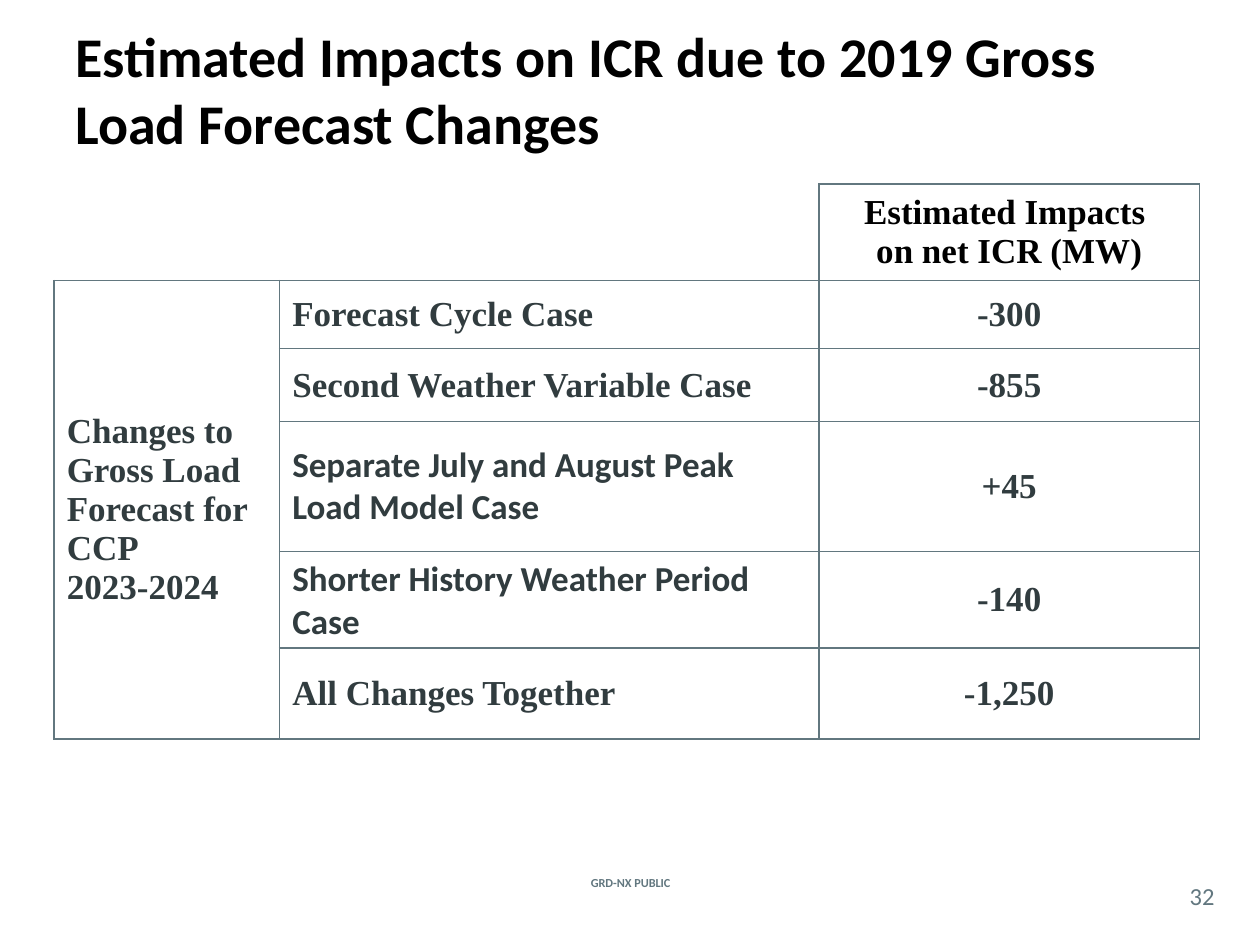
from pptx import Presentation
from pptx.dml.color import RGBColor
from pptx.enum.text import MSO_ANCHOR, PP_ALIGN
from pptx.oxml.ns import qn
from pptx.util import Inches, Pt
from lxml.etree import SubElement

COLORS = {"black": "000000", "slate": "62777F", "dark": "313C3F"}
SERIF, SANS = "Times New Roman", "Calibri"

prs = Presentation()
prs.slide_width, prs.slide_height = Inches(10), Inches(7.5)
s = prs.slides.add_slide(prs.slide_layouts[6])


def write(tf, text, size, font, color, bold=True, align=PP_ALIGN.LEFT):
    tf.word_wrap = True
    tf.text = text
    for p in tf.paragraphs:
        p.alignment = align
        p.font.size, p.font.name, p.font.bold = Pt(size), font, bold
        p.font.color.rgb = RGBColor.from_string(COLORS[color])


def add_border(cell, side, visible):
    ln = SubElement(cell._tc.get_or_add_tcPr(), qn(f"a:ln{side}"), w=str(Pt(1)))
    if visible:
        fill = SubElement(ln, qn("a:solidFill"))
        SubElement(fill, qn("a:srgbClr"), val=COLORS["slate"])
    else:
        SubElement(ln, qn("a:noFill"))


# Title, footer and page number: box, inset, then text settings
texts = [
    ((0.5, 0.08, 9, 1.25), 0.1,
     ("Estimated Impacts on ICR due to 2019 Gross Load Forecast Changes",
      32, SANS, "black")),
    ((4.27, 6.92, 1.47, 0.17), 0.1,
     ("GRD-NX PUBLIC", 7, SANS, "slate", True, PP_ALIGN.CENTER)),
    ((9.33, 6.96, 0.42, 0.29), 0,
     ("32", 14, SANS, "slate", False, PP_ALIGN.CENTER)),
]
for box, inset, settings in texts:
    tf = s.shapes.add_textbox(*map(Inches, box)).text_frame
    tf.margin_left = tf.margin_right = Inches(inset)
    tf.margin_top = tf.margin_bottom = Inches(inset / 2)
    tf.vertical_anchor = MSO_ANCHOR.MIDDLE
    write(tf, *settings)

# Table grid
col_widths = [1.79, 4.28, 3.02]
row_heights = [0.66, 0.54, 0.58, 1.03, 0.72, 0.72]
table = s.shapes.add_table(
    len(row_heights), len(col_widths), Inches(0.43), Inches(1.46),
    Inches(sum(col_widths)), Inches(sum(row_heights))).table
table.first_row = table.horz_banding = False
for column, width in zip(table.columns, col_widths):
    column.width = Inches(width)
for row, height in zip(table.rows, row_heights):
    row.height = Inches(height)

# Borders everywhere except around the empty top left corner
for r, row in enumerate(table.rows):
    for c, cell in enumerate(row.cells):
        corner = r == 0 and c < 2
        for side in "LRTB":
            add_border(cell, side, not corner or side == "B" or (side == "R" and c == 1))
        cell.fill.background()
        cell.vertical_anchor = MSO_ANCHOR.MIDDLE
table.cell(0, 0).merge(table.cell(0, 1))
table.cell(1, 0).merge(table.cell(5, 0))

# Table text
write(table.cell(0, 2).text_frame, "Estimated Impacts \non net ICR (MW)",
      20, SERIF, "black", align=PP_ALIGN.CENTER)
write(table.cell(1, 0).text_frame,
      "Changes to Gross Load Forecast for CCP\n2023-2024", 20, SERIF, "dark")
cases = [
    ("Forecast Cycle Case", SERIF, "-300"),
    ("Second Weather Variable Case", SERIF, "-855"),
    ("Separate July and August Peak Load Model Case", SANS, "+45"),
    ("Shorter History Weather Period Case", SANS, "-140"),
    ("All Changes Together", SERIF, "-1,250"),
]
for r, (case, font, impact) in enumerate(cases, start=1):
    write(table.cell(r, 1).text_frame, case, 20, font, "dark")
    write(table.cell(r, 2).text_frame, impact, 20, SERIF, "dark", align=PP_ALIGN.CENTER)

prs.save("out.pptx")
